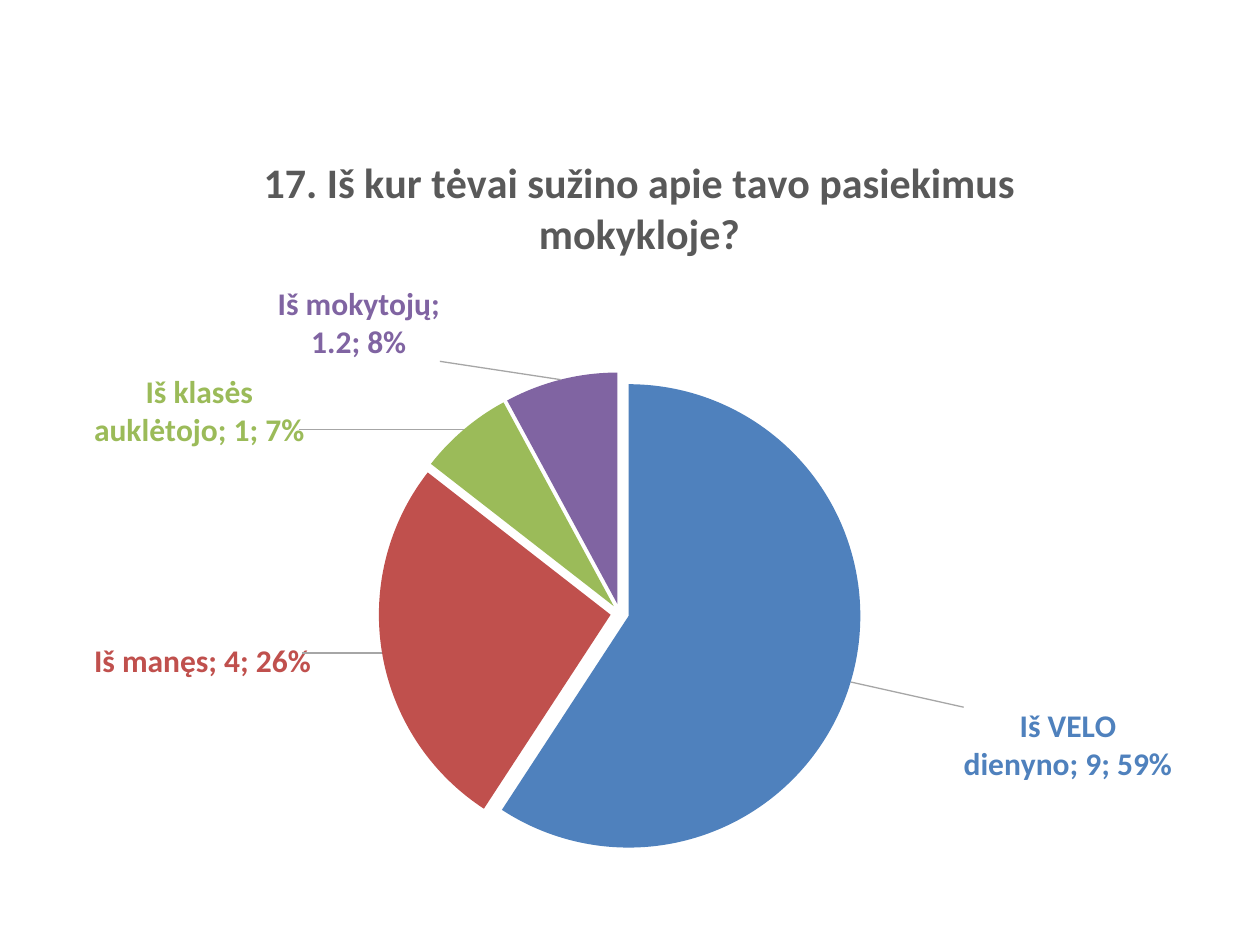
from lxml import etree
from pptx import Presentation
from pptx import util as u
from pptx.chart.data import CategoryChartData
from pptx.dml.color import RGBColor
from pptx.enum import chart as ch
from pptx.oxml import parse_xml
from pptx.oxml.ns import nsdecls, qn

PX = u.Inches(1) // 126
FONT = "Calibri"
GREY = RGBColor(0x59, 0x59, 0x59)
LEADER = RGBColor(0xA6, 0xA6, 0xA6)
BLUE = RGBColor(0x4F, 0x81, 0xBD)
RED = RGBColor(0xC0, 0x50, 0x4D)
GREEN = RGBColor(0x9B, 0xBB, 0x59)
PURPLE = RGBColor(0x80, 0x64, 0xA2)

TITLE = "17. Iš kur tėvai sužino apie tavo pasiekimus mokykloje?"
# category, value, colour, label shift in px
SLICES = [
    ("Iš VELO dienyno", 9, BLUE, (106, 23)),
    ("Iš manęs", 4, RED, (-73, -12)),
    ("Iš klasės auklėtojo", 1, GREEN, (-160, 25)),
    ("Iš mokytojų", 1.2, PURPLE, (-119, -11)),
]


def layout(box, **px):
    """Manual chart layout; lengths are px within the chart's box."""
    size = {"x": box[2], "w": box[2], "y": box[3], "h": box[3]}
    values = "".join(f'<c:{k} val="{v / size[k]:.3f}"/>' for k, v in px.items())
    target = '<c:layoutTarget val="inner"/>' if "w" in px else ""
    modes = '<c:xMode val="edge"/><c:yMode val="edge"/>' if "w" in px else ""
    return parse_xml(f'<c:layout {nsdecls("c")}><c:manualLayout>{target}{modes}'
                     f'{values}</c:manualLayout></c:layout>')


def set_font(font, size, color):
    for name, value in {"name": FONT, "size": u.Pt(size), "bold": True}.items():
        setattr(font, name, value)
    font.color.rgb = color


def add_title(chart):
    chart.has_title = True
    tf = chart.chart_title.text_frame
    tf.text = TITLE
    set_font(tf.paragraphs[0].runs[0].font, 24, GREY)
    chart.chart_title.include_in_layout = False


def add_labels(plot, box):
    """Label every slice in its own colour, with leader lines."""
    plot.has_data_labels = True
    settings = {"show_value": True, "show_percentage": True,
                "show_category_name": True, "show_legend_key": False,
                "position": ch.XL_LABEL_POSITION.OUTSIDE_END}
    series = plot.series[0]
    labels = series.data_labels
    for name, value in settings.items():
        setattr(labels, name, value)
    set_font(labels.font, 18, BLUE)
    root = series._element.find(qn("c:dLbls"))
    for old in root.findall(qn("c:showLeaderLines")):
        root.remove(old)
    for tag in ("separator", "showLeaderLines", "leaderLines"):
        item = etree.SubElement(root, qn(f"c:{tag}"))
        if tag == "separator":
            item.text = "; "
        elif tag == "showLeaderLines":
            item.set("val", "1")
        else:
            item.append(parse_xml(
                f'<c:spPr {nsdecls("c", "a")}><a:ln w="9525"><a:solidFill>'
                f'<a:srgbClr val="{LEADER}"/></a:solidFill></a:ln></c:spPr>'))

    for i, (_, _, color, (dx, dy)) in enumerate(SLICES):
        label = series.points[i].data_label
        set_font(label.font, 18, color)
        label.position = settings["position"]
        item = root.findall(qn("c:dLbl"))[i]
        item.find(qn("c:idx")).addnext(layout(box, x=dx, y=dy))
        for tag in ("showVal", "showCatName", "showPercent"):
            item.find(qn(f"c:{tag}")).set("val", "1")
        etree.SubElement(item, qn("c:separator")).text = "; "


def add_pie(s, box):
    data = CategoryChartData()
    data.categories = [row[0] for row in SLICES]
    data.add_series(TITLE, [row[1] for row in SLICES])
    chart = s.shapes.add_chart(ch.XL_CHART_TYPE.PIE,
                               *(n * PX for n in box), data).chart
    chart.font.name, chart.font.size = FONT, u.Pt(10)
    chart.has_legend = False
    add_title(chart)

    plot = chart.plots[0]
    plot.vary_by_categories = True
    series = plot.series[0]
    for i, row in enumerate(SLICES):
        fill = series.points[i].format.fill
        fill.solid()
        fill.fore_color.rgb = row[2]
    series._element.find(qn("c:dPt")).addprevious(
        parse_xml(f'<c:explosion {nsdecls("c")} val="4"/>'))
    for point in series._element.findall(qn("c:dPt")):
        point.find(qn("c:spPr")).addprevious(
            parse_xml(f'<c:explosion {nsdecls("c")} val="4"/>'))
    add_labels(plot, box)

    area = chart._chartSpace.chart.plotArea
    for old in area.findall(qn("c:layout")):
        area.remove(old)
    area.insert(0, layout(box, x=285, y=247, w=482, h=482))


def main():
    prs = Presentation()
    prs.slide_width, prs.slide_height = 1260 * PX, 945 * PX
    s = prs.slides.add_slide(prs.slide_layouts[6])
    add_pie(s, (94, 125, 1091, 745))
    prs.save("out.pptx")


if __name__ == "__main__":
    main()
